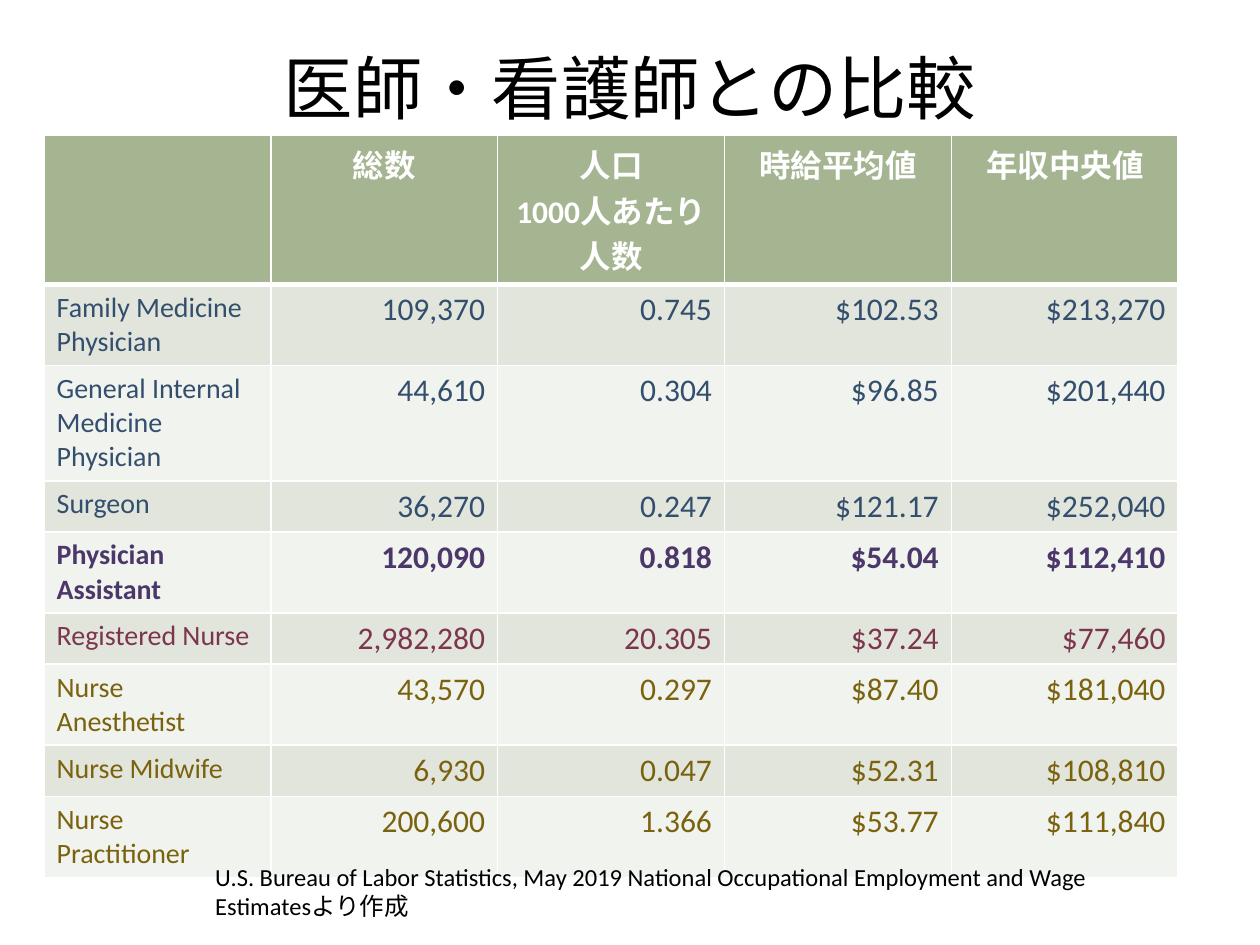
"""Build a slide comparing physician assistants with physicians and nurses."""
from dataclasses import dataclass

from lxml.etree import SubElement
from pptx import Presentation
from pptx.dml.color import RGBColor
from pptx.enum.text import MSO_ANCHOR, MSO_AUTO_SIZE, PP_ALIGN
from pptx.oxml.ns import qn
from pptx.util import Cm, Pt

TITLE = "医師・看護師との比較"
HEADINGS = ["", "総数", "人口\n1000人あたり人数", "時給平均値", "年収中央値"]
OCCUPATIONS = [
    ("physician", "Family Medicine Physician", "109,370", "0.745", "$102.53", "$213,270"),
    ("physician", "General Internal Medicine Physician", "44,610", "0.304", "$96.85", "$201,440"),
    ("physician", "Surgeon", "36,270", "0.247", "$121.17", "$252,040"),
    ("assistant", "Physician Assistant", "120,090", "0.818", "$54.04", "$112,410"),
    ("nurse", "Registered Nurse", "2,982,280", "20.305", "$37.24", "$77,460"),
    ("advanced", "Nurse Anesthetist", "43,570", "0.297", "$87.40", "$181,040"),
    ("advanced", "Nurse Midwife", "6,930", "0.047", "$52.31", "$108,810"),
    ("advanced", "Nurse Practitioner", "200,600", "1.366", "$53.77", "$111,840"),
]
SOURCE = ("U.S. Bureau of Labor Statistics, May 2019 National Occupational "
          "Employment and Wage Estimatesより作成")


@dataclass(frozen=True)
class Theme:
    font: str = "Calibri"
    black: str = "000000"
    white: str = "FFFFFF"
    header: str = "A5B592"
    bands: tuple = ("E1E5DC", "F0F3EE")
    physician: str = "344E6D"
    assistant: str = "4C376B"
    nurse: str = "7C354D"
    advanced: str = "7A620E"
    title_size: float = 39.6
    value_size: float = 18
    label_size: float = 16
    source_size: float = 14
    rule: float = 1
    header_rule: float = 3


THEME = Theme()


def write(frame, text, *, size, color, bold=False, align=PP_ALIGN.LEFT):
    frame.text = text
    for paragraph in frame.paragraphs:
        paragraph.alignment = align
        for run in paragraph.runs:
            run.font.name = THEME.font
            run.font.size = Pt(size)
            run.font.bold = bold
            run.font.color.rgb = RGBColor.from_string(color)


def place(shape, left, top, width, height):
    shape.left, shape.top = Cm(left), Cm(top)
    shape.width, shape.height = Cm(width), Cm(height)


def paint(cell, fill, top, bottom):
    properties = cell._tc.get_or_add_tcPr()
    for side, weight in zip("LRTB", (THEME.rule, THEME.rule, top, bottom)):
        line = SubElement(properties, qn(f"a:ln{side}"), w=str(Pt(weight)))
        solid = SubElement(line, qn("a:solidFill"))
        SubElement(solid, qn("a:srgbClr"), val=THEME.white)
    cell.fill.solid()
    cell.fill.fore_color.rgb = RGBColor.from_string(fill)


def add_comparison(slide):
    row_count, column_count = len(OCCUPATIONS) + 1, len(HEADINGS)
    table = slide.shapes.add_table(row_count, column_count, Cm(0.89), Cm(2.72),
                                   Cm(22.86), Cm(1.03 * row_count)).table
    for column, heading in enumerate(HEADINGS):
        cell = table.cell(0, column)
        write(cell.text_frame, heading, size=THEME.value_size, color=THEME.white,
              bold=True, align=PP_ALIGN.CENTER)
        paint(cell, THEME.header, THEME.rule, THEME.header_rule)
    for row, (group, *entries) in enumerate(OCCUPATIONS, start=1):
        for column, entry in enumerate(entries):
            cell = table.cell(row, column)
            write(cell.text_frame, entry,
                  size=THEME.value_size if column else THEME.label_size,
                  color=getattr(THEME, group), bold=group == "assistant",
                  align=PP_ALIGN.RIGHT if column else PP_ALIGN.LEFT)
            paint(cell, THEME.bands[(row - 1) % 2],
                  THEME.header_rule if row == 1 else THEME.rule, THEME.rule)


def main():
    deck = Presentation()
    deck.slide_width, deck.slide_height = Cm(25.4), Cm(19.05)
    slide = deck.slides.add_slide(deck.slide_layouts[5])

    title = slide.shapes.title
    place(title, 1.27, 0.76, 22.86, 1.96)
    title.text_frame.auto_size = MSO_AUTO_SIZE.NONE
    title.text_frame.vertical_anchor = MSO_ANCHOR.MIDDLE
    write(title.text_frame, TITLE, size=THEME.title_size, color=THEME.black,
          align=PP_ALIGN.CENTER)

    add_comparison(slide)

    source = slide.shapes.add_textbox(Cm(4.09), Cm(17.25), Cm(19), Cm(1.45))
    source.text_frame.word_wrap = True
    source.text_frame.auto_size = MSO_AUTO_SIZE.SHAPE_TO_FIT_TEXT
    write(source.text_frame, SOURCE, size=THEME.source_size, color=THEME.black)

    deck.save("out.pptx")


if __name__ == "__main__":
    main()
